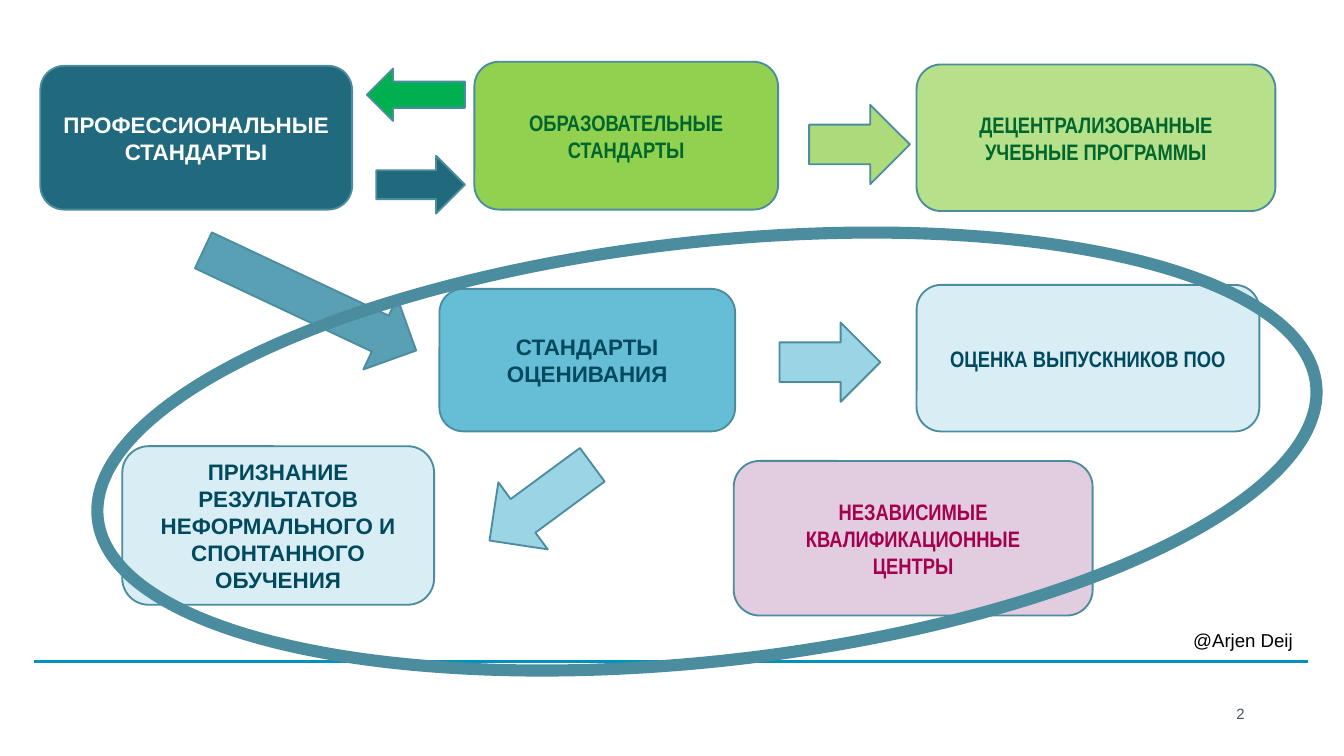
from dataclasses import dataclass

from lxml import etree
from pptx import Presentation
from pptx.dml.color import RGBColor
from pptx.enum.shapes import MSO_CONNECTOR, MSO_SHAPE as SHAPE
from pptx.enum.text import MSO_ANCHOR, PP_ALIGN
from pptx.oxml.ns import qn
from pptx.util import Inches, Pt


@dataclass(frozen=True)
class Theme:
    outline: str = "4B8D9E"
    rule: str = "0092BB"
    navy: str = "21697D"
    teal: str = "006E8C"
    sky: str = "66BED6"
    lime: str = "92D050"
    green: str = "00B050"
    mauve: str = "E2CCDF"
    white: str = "FFFFFF"
    black: str = "000000"
    gray: str = "455560"
    dark_green: str = "00662E"
    dark_teal: str = "00495E"
    crimson: str = "A50050"
    sans: str = "Arial"
    narrow: str = "Arial Narrow"
    box_size: int = 12
    credit_size: int = 10
    number_size: int = 8


theme = Theme()

presentation = Presentation()
presentation.slide_width = Inches(10)
presentation.slide_height = Inches(10 * 9 / 16)
slide = presentation.slides.add_slide(presentation.slide_layouts[6])


def add_outlined(kind, position, fill=None, opacity=100, rotation=0, weight=1):
    """Add a preset shape with the common outline; opacity is in percent."""
    shape = slide.shapes.add_shape(kind, *map(Inches, position))
    shape.shadow.inherit = False
    shape.rotation = rotation
    shape.line.color.rgb = RGBColor.from_string(theme.outline)
    shape.line.width = Pt(weight)
    if fill is None:
        shape.fill.background()
        return shape
    shape.fill.solid()
    shape.fill.fore_color.rgb = RGBColor.from_string(fill)
    if opacity < 100:
        color = shape._element.spPr.find(qn("a:solidFill"))[0]
        etree.SubElement(color, qn("a:alpha"), val=str(opacity * 1000))
    return shape


def write_lines(shape, lines, size, font, color, align, bold=False):
    """Write each line as a paragraph with one run."""
    frame = shape.text_frame
    frame.word_wrap = True
    frame.vertical_anchor = MSO_ANCHOR.MIDDLE
    for index, line in enumerate(lines):
        paragraph = frame.paragraphs[0] if index == 0 else frame.add_paragraph()
        paragraph.alignment = align
        run = paragraph.add_run()
        run.text = line
        run.font.size = Pt(size)
        run.font.name = font
        run.font.bold = bold
        run.font.color.rgb = RGBColor.from_string(color)


# Footer rule
rule = slide.shapes.add_connector(
    MSO_CONNECTOR.STRAIGHT, Inches(0.25), Inches(4.92), Inches(9.73), Inches(4.92))
rule.line.color.rgb = RGBColor.from_string(theme.rule)
rule.line.width = Pt(1.75)
etree.SubElement(rule._element.spPr, qn("a:effectLst"))

# Boxes: position, fill, opacity, font, text colour, lines
boxes = [
    ((0.3, 0.49, 2.32, 1.07), theme.navy, 100, theme.sans, theme.white,
     ["ПРОФЕССИОНАЛЬНЫЕ СТАНДАРТЫ"]),
    ((6.82, 0.48, 2.67, 1.09), theme.lime, 66, theme.narrow, theme.dark_green,
     ["ДЕЦЕНТРАЛИЗОВАННЫЕ УЧЕБНЫЕ ПРОГРАММЫ"]),
    ((3.27, 2.15, 2.2, 1.06), theme.sky, 100, theme.sans, theme.dark_teal,
     ["СТАНДАРТЫ ОЦЕНИВАНИЯ"]),
    ((0.91, 3.32, 2.32, 1.18), theme.sky, 25, theme.sans, theme.dark_teal,
     ["ПРИЗНАНИЕ РЕЗУЛЬТАТОВ НЕФОРМАЛЬНОГО И СПОНТАННОГО ОБУЧЕНИЯ"]),
    ((6.82, 2.12, 2.55, 1.09), theme.sky, 25, theme.narrow, theme.dark_teal,
     ["ОЦЕНКА ВЫПУСКНИКОВ ПОО"]),
    ((5.46, 3.43, 2.67, 1.15), theme.mauve, 100, theme.narrow, theme.crimson,
     ["НЕЗАВИСИМЫЕ КВАЛИФИКАЦИОННЫЕ", "ЦЕНТРЫ"]),
    ((3.53, 0.46, 2.26, 1.1), theme.lime, 100, theme.narrow, theme.dark_green,
     ["ОБРАЗОВАТЕЛЬНЫЕ", "СТАНДАРТЫ"]),
]
for position, fill, opacity, font, color, lines in boxes:
    box = add_outlined(SHAPE.ROUNDED_RECTANGLE, position, fill, opacity)
    write_lines(box, lines, theme.box_size, font, color, PP_ALIGN.CENTER, bold=True)

# Arrows: kind, position, fill, opacity, rotation
arrows = [
    (SHAPE.LEFT_ARROW, (2.73, 0.51, 0.73, 0.39), theme.green, 100, 0),
    (SHAPE.RIGHT_ARROW, (2.8, 1.16, 0.66, 0.43), theme.navy, 100, 0),
    (SHAPE.RIGHT_ARROW, (6.02, 0.78, 0.75, 0.59), theme.lime, 75, 0),
    (SHAPE.RIGHT_ARROW, (5.8, 2.4, 0.75, 0.59), theme.sky, 65, 0),
    (SHAPE.LEFT_ARROW, (3.55, 3.43, 0.95, 0.62), theme.sky, 65, 323.6),
    (SHAPE.RIGHT_ARROW, (1.43, 1.94, 1.75, 0.59), theme.teal, 65, 25.2),
]
for kind, position, fill, opacity, rotation in arrows:
    add_outlined(kind, position, fill, opacity, rotation)

# Ring around the assessment stage
add_outlined(SHAPE.OVAL, (0.7, 1.8, 9.12, 3.12), rotation=353.7, weight=6.5)

# Credit and slide number
captions = [
    ((8.78, 4.63, 1.19, 0.27), "@Arjen Deij", theme.credit_size, theme.black, PP_ALIGN.LEFT),
    ((7.63, 5.16, 1.73, 0.3), "2", theme.number_size, theme.gray, PP_ALIGN.RIGHT),
]
for position, text, size, color, align in captions:
    caption = slide.shapes.add_textbox(*map(Inches, position))
    write_lines(caption, [text], size, theme.sans, color, align)

presentation.save("out.pptx")
